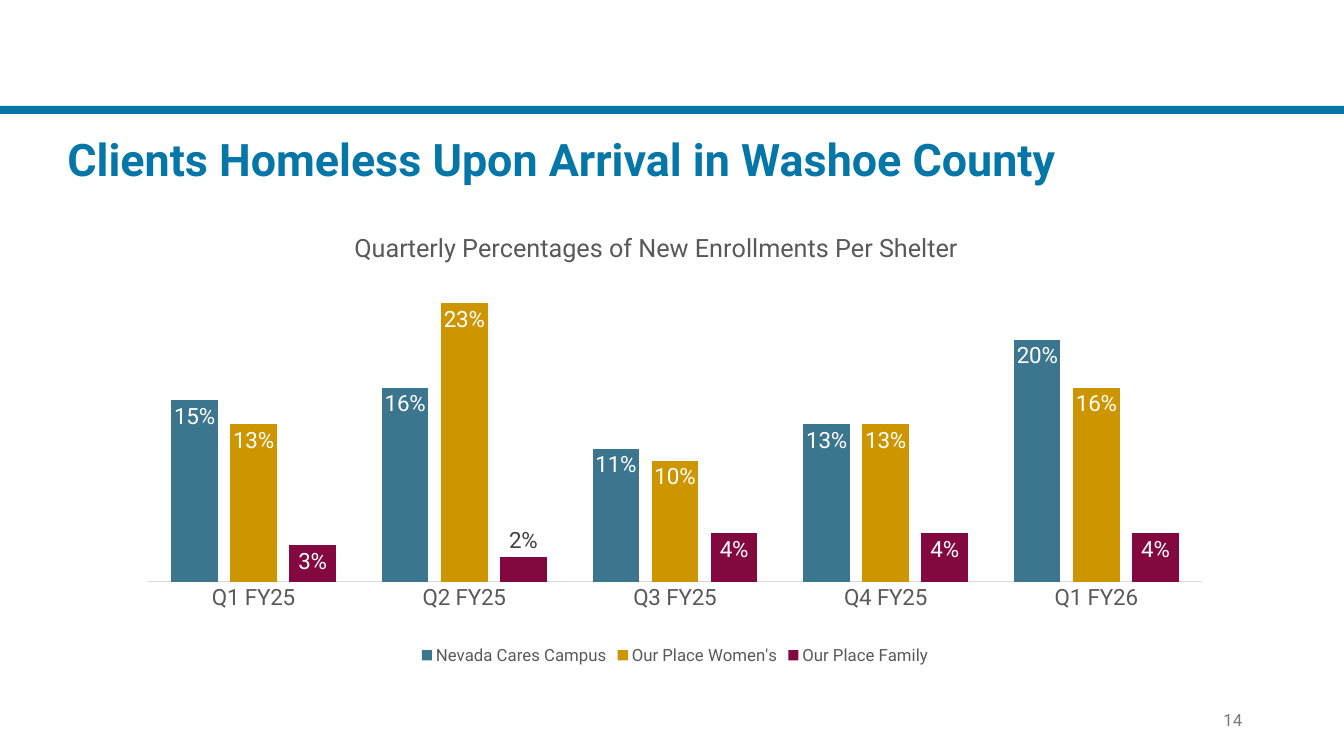
from lxml.etree import SubElement, Element
from pptx import Presentation
from pptx.chart.data import CategoryChartData as Data
from pptx.dml.color import RGBColor as RGB
from pptx.enum.chart import XL_CHART_TYPE as Kind, XL_LABEL_POSITION as Spot
from pptx.enum.chart import XL_LEGEND_POSITION as Side, XL_TICK_MARK as Tick
from pptx.enum.shapes import MSO_SHAPE as Shape
from pptx.enum.text import MSO_ANCHOR as Anchor, PP_ALIGN as Align
from pptx.oxml.ns import qn
from pptx.util import Inches, Pt

TITLE = "Clients Homeless Upon Arrival in Washoe County"
HEAD = "Quarterly Percentages of New Enrollments Per Shelter"
PAGE = "14"
QUARTERS = ["Q1 FY25", "Q2 FY25", "Q3 FY25", "Q4 FY25", "Q1 FY26"]
SHELTERS = [
    ("Nevada Cares Campus", "3C758E", [0.15, 0.16, 0.11, 0.13, 0.20]),
    ("Our Place Women's", "CD9600", [0.13, 0.23, 0.10, 0.13, 0.16]),
    ("Our Place Family", "830840", [0.03, 0.02, 0.04, 0.04, 0.04]),
]
LOW = 0.02  # bars this short carry their label on top
PERCENT = "0%"

THEME = {
    "font": "Roboto",
    "band": "0476A8",
    "axis": "D9D9D9",
    "title": {"size": 32, "color": "0476A8", "bold": True},
    "head": {"size": 18, "color": "595959", "bold": False},
    "tick": {"size": 16, "color": "595959"},
    "label": {"size": 16, "color": "FFFFFF"},
    "above": {"size": 16, "color": "404040"},
    "legend": {"size": 12, "color": "595959"},
    "page": {"size": 12, "color": "797979"},
}


def style(font, name):
    look = dict(THEME[name], name=THEME["font"])
    font.color.rgb = RGB.from_string(look.pop("color"))
    look["size"] = Pt(look["size"])
    for key, value in look.items():
        setattr(font, key, value)


def paint(fill, color):
    fill.solid()
    fill.fore_color.rgb = RGB.from_string(color)


def write(slide, text, box, name, align):
    frame = slide.shapes.add_textbox(*map(Inches, box)).text_frame
    frame.word_wrap = True
    frame.vertical_anchor = Anchor.MIDDLE
    line = frame.paragraphs[0]
    line.alignment = align
    line.line_spacing = 0.9
    run = line.add_run()
    run.text = text
    style(run.font, name)


def place(part, index, values):
    """Give a chart part a manual layout, as fractions of the chart."""
    old = part.find(qn("c:layout"))
    if old is not None:
        part.remove(old)
    layout = Element(qn("c:layout"))
    part.insert(index, layout)
    manual = SubElement(layout, qn("c:manualLayout"))
    for key, value in values.items():
        SubElement(manual, qn("c:" + key)).set("val", str(value))


def add_bars(slide, box):
    data = Data(number_format=PERCENT)
    data.categories = QUARTERS
    for name, _, values in SHELTERS:
        data.add_series(name, values)
    chart = slide.shapes.add_chart(
        Kind.COLUMN_CLUSTERED, *map(Inches, box), data).chart
    style(chart.font, "tick")

    chart.has_title = True
    line = chart.chart_title.text_frame.paragraphs[0]
    run = line.add_run()
    run.text = HEAD
    style(run.font, "head")
    edge = {"xMode": "edge", "yMode": "edge"}
    place(chart.chart_title._element, 1, {**edge, "x": 0.2, "y": 0.04})
    place(chart._chartSpace.chart.plotArea, 0, {
        "layoutTarget": "inner", **edge,
        "x": 0.014, "y": 0.153, "w": 0.972, "h": 0.657})

    chart.has_legend = True
    chart.legend.position = Side.BOTTOM
    chart.legend.include_in_layout = False
    style(chart.legend.font, "legend")

    cats, vals = chart.category_axis, chart.value_axis
    cats.major_tick_mark = cats.minor_tick_mark = Tick.NONE
    paint(cats.format.line.fill, THEME["axis"])
    cats.format.line.width = Pt(0.75)
    style(cats.tick_labels.font, "tick")
    vals.visible = vals.has_major_gridlines = False
    vals.minimum_scale, vals.maximum_scale = 0, 0.25

    plot = chart.plots[0]
    plot.gap_width, plot.overlap = 99, -27
    plot.vary_by_categories = False
    for bars, (_, color, values) in zip(plot.series, SHELTERS):
        paint(bars.format.fill, color)
        labels = bars.data_labels
        labels.show_value = True
        labels.position = Spot.INSIDE_END
        labels.number_format = PERCENT
        labels.number_format_is_linked = False
        style(labels.font, "label")
        for i, value in enumerate(values):
            if value <= LOW:
                label = bars.points[i].data_label
                style(label.font, "above")
                label.position = Spot.OUTSIDE_END


def main():
    deck = Presentation()
    deck.slide_width, deck.slide_height = Inches(13.33), Inches(7.5)
    slide = deck.slides.add_slide(deck.slide_layouts[6])
    band = slide.shapes.add_shape(
        Shape.RECTANGLE, *map(Inches, (0, 1.05, 13.33, 0.08)))
    band.shadow.inherit = False
    paint(band.fill, THEME["band"])
    band.line.fill.background()
    write(slide, TITLE, (0.57, 1.23, 11.5, 0.75), "title", Align.LEFT)
    add_bars(slide, (1.32, 2.07, 10.75, 4.57))
    write(slide, PAGE, (9.42, 6.95, 3, 0.4), "page", Align.RIGHT)
    deck.save("out.pptx")


if __name__ == "__main__":
    main()
